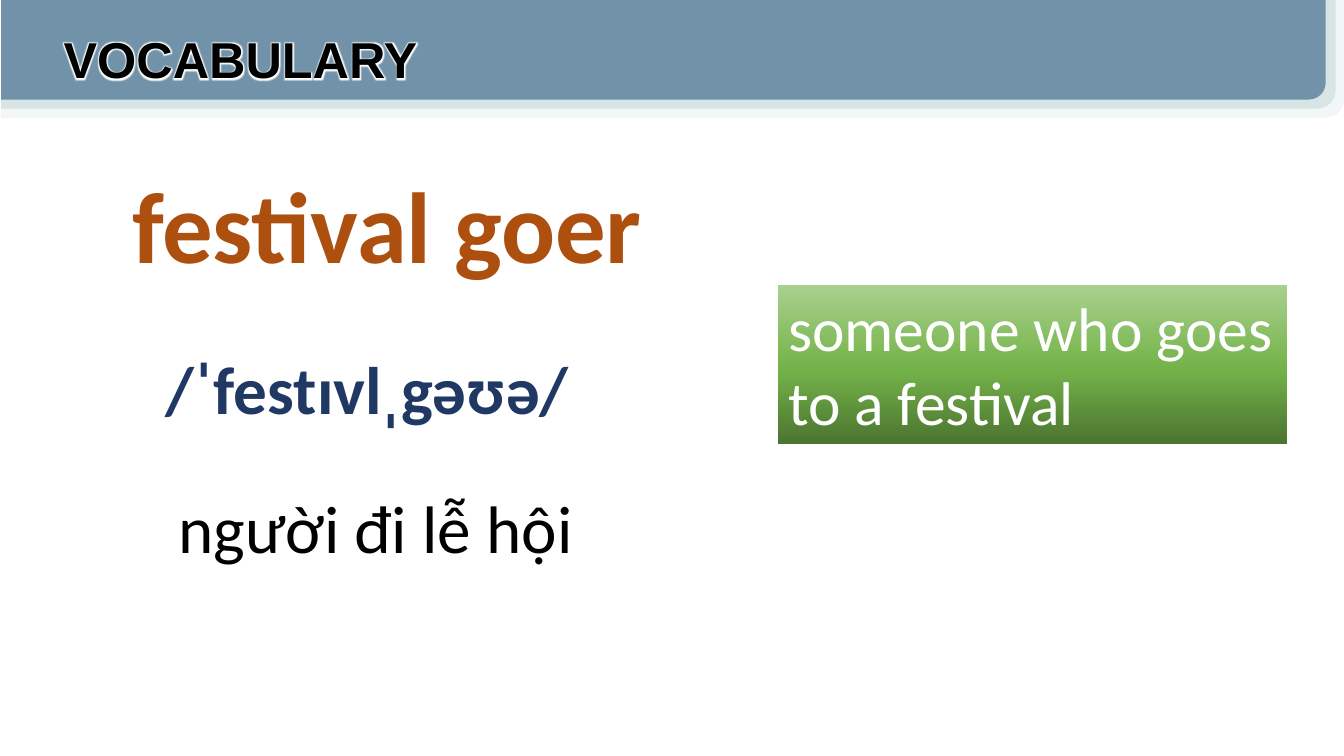
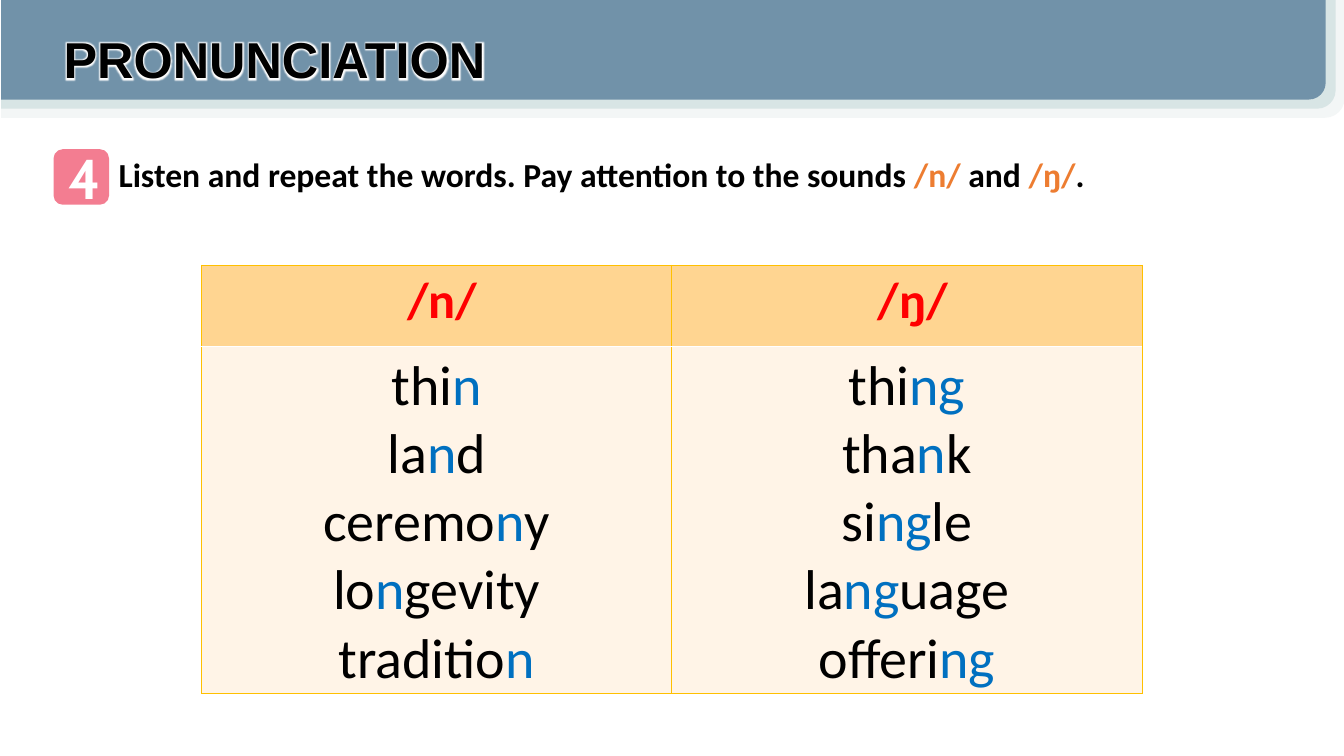
from copy import deepcopy
from dataclasses import dataclass

from lxml import etree
from pptx import Presentation
from pptx.dml import color
from pptx.enum import shapes, text
from pptx.oxml import ns
from pptx.util import Cm, Pt

BLACK, WHITE = "000000", "FFFFFF"
NAVY, RUST, ORANGE, RED, BLUE = "203864", "AD4F0F", "ED7D31", "FF0000", "0070C0"
PINK, GOLD, HEADER, CREAM = "F37D91", "FFC000", "FFD591", "FFF4E7"
LEFT, CENTER = text.PP_ALIGN.LEFT, text.PP_ALIGN.CENTER
TOP, MIDDLE = text.MSO_ANCHOR.TOP, text.MSO_ANCHOR.MIDDLE


@dataclass(frozen=True)
class Box:
    left: float
    top: float
    width: float
    height: float

    def emu(self) -> tuple:
        return Cm(self.left), Cm(self.top), Cm(self.width), Cm(self.height)


@dataclass(frozen=True)
class Style:
    size: float
    color: str = BLACK
    bold: bool = False
    font: str = "Calibri"


@dataclass(frozen=True)
class Band:
    width: float
    height: float
    color: str


@dataclass(frozen=True)
class Entry:
    box: Box
    words: str
    style: Style
    spacing: float = 1.0


@dataclass(frozen=True)
class Column:
    sound: str
    words: tuple


BANDS = (
    Band(33.86, 3.0, "F3F6F6"),
    Band(33.63, 2.77, "D8E5E5"),
    Band(33.38, 2.54, "7192A9"),
)
TITLE_BOX = Box(1.35, 0.58, 11.48, 1.8)
TITLE_STYLE = Style(36, BLACK, True, "Arial")
ENTRIES = (
    Entry(Box(2.49, 4.32, 14.53, 1.83), "festival goer", Style(72, RUST, True), 0.9),
    Entry(Box(3.52, 8.64, 11.48, 2.31), "/ˈfestɪvlˌgəʊə/", Style(48, NAVY, True)),
    Entry(Box(3.84, 12.14, 11.25, 2.31), "người đi lễ hội", Style(48)),
)
MEANING_STOPS = ((0, "4B7430"), (0.48, "74B349"), (1, "A9D18E"))
COLUMNS = (
    Column("/n/", ("thi|n", "la|n|d", "ceremo|n|y", "lo|n|gevity", "traditio|n")),
    Column("/ŋ/", ("thi|ng", "tha|n|k", "si|ng|le", "la|ng|uage", "offeri|ng")),
)


def rgb(value: str) -> color.RGBColor:
    return color.RGBColor.from_string(value)


def add_run(p, words: str, style: Style):
    r = p.add_run()
    r.text = words
    r.font.name = style.font
    r.font.size = Pt(style.size)
    r.font.bold = style.bold
    r.font.color.rgb = rgb(style.color)
    return r


def set_frame(tf, align=LEFT, anchor=TOP):
    tf.word_wrap = True
    tf.auto_size = text.MSO_AUTO_SIZE.NONE
    tf.vertical_anchor = anchor
    p = tf.paragraphs[0]
    p.alignment = align
    return p


def add_shape(slide, kind, box: Box, fill: str = ""):
    sp = slide.shapes.add_shape(kind, *box.emu())
    sp.shadow.inherit = False
    sp.line.fill.background()
    if fill:
        sp.fill.solid()
        sp.fill.fore_color.rgb = rgb(fill)
    return sp


def add_text(slide, box: Box, align=LEFT):
    return set_frame(slide.shapes.add_textbox(*box.emu()).text_frame, align)


def add_glow(r, glow_color: str) -> None:
    fill = r.font._element.find(ns.qn("a:solidFill"))
    effects = etree.Element(ns.qn("a:effectLst"))
    glow = etree.SubElement(effects, ns.qn("a:glow"), rad=str(Pt(4)))
    etree.SubElement(glow, ns.qn("a:srgbClr"), val=glow_color)
    fill.addnext(effects)


def add_slide(prs, title: str):
    slide = prs.slides.add_slide(prs.slide_layouts[5])
    for band in BANDS:
        sp = add_shape(slide, shapes.MSO_SHAPE.ROUND_1_RECTANGLE,
                       Box(0.03, -0.03, band.width, band.height), band.color)
        sp._element.spPr.find(ns.qn("a:xfrm")).set("flipV", "1")
    sp = slide.shapes.title
    sp.left, sp.top, sp.width, sp.height = TITLE_BOX.emu()
    add_glow(add_run(set_frame(sp.text_frame), title, TITLE_STYLE), WHITE)
    slide.shapes._spTree.append(sp._element)
    return slide


def set_gradient(fill, stops: tuple, angle: float) -> None:
    fill.gradient()
    fill.gradient_angle = angle
    first = fill.gradient_stops[0]._gs
    first.addnext(deepcopy(first))
    for stop, (position, value) in zip(fill.gradient_stops, stops):
        stop.position = position
        stop.color.rgb = rgb(value)


def set_borders(cell, top: tuple, bottom: tuple) -> None:
    side = (GOLD, 0.5)
    for tag, (value, width) in zip(("lnL", "lnR", "lnT", "lnB"), (side, side, top, bottom)):
        ln = etree.SubElement(cell._tc.get_or_add_tcPr(), ns.qn(f"a:{tag}"), w=str(Pt(width)))
        fill = etree.SubElement(ln, ns.qn("a:solidFill"))
        etree.SubElement(fill, ns.qn("a:srgbClr"), val=value)


def set_cell(cell, fill: str, top: tuple, bottom: tuple) -> None:
    set_borders(cell, top, bottom)
    cell.fill.solid()
    cell.fill.fore_color.rgb = rgb(fill)
    cell.margin_top, cell.margin_bottom = Cm(0.13), Cm(0)


def add_sound_table(slide, box: Box, header_height: float) -> None:
    tbl = slide.shapes.add_table(2, len(COLUMNS), *box.emu()).table
    tbl.first_row = tbl.horz_banding = False
    tbl.rows[0].height = Cm(header_height)
    tbl.rows[1].height = Cm(box.height - header_height)
    outer, divider = (GOLD, 0.5), (WHITE, 1)
    for i, column in enumerate(COLUMNS):
        head, body = tbl.cell(0, i), tbl.cell(1, i)
        set_cell(head, HEADER, outer, divider)
        set_cell(body, CREAM, divider, outer)
        head.margin_left = Cm(0.54)
        p = head.text_frame.paragraphs[0]
        p.alignment = CENTER
        add_run(p, column.sound, Style(36, RED, True))
        for j, word in enumerate(column.words):
            tf = body.text_frame
            p = tf.add_paragraph() if j else tf.paragraphs[0]
            p.alignment = CENTER
            for k, part in enumerate(word.split("|")):
                add_run(p, part, Style(40, BLUE if k % 2 else BLACK))


def build_vocabulary(prs) -> None:
    slide = add_slide(prs, "VOCABULARY")
    for entry in ENTRIES:
        p = add_text(slide, entry.box, CENTER)
        p.line_spacing = entry.spacing
        add_run(p, entry.words, entry.style)
    sp = add_shape(slide, shapes.MSO_SHAPE.RECTANGLE, Box(19.61, 7.19, 12.83, 4.01))
    set_gradient(sp.fill, MEANING_STOPS, 90)
    add_run(set_frame(sp.text_frame), "someone who goes to a festival", Style(44, WHITE))


def build_pronunciation(prs) -> None:
    slide = add_slide(prs, "PRONUNCIATION")
    p = add_text(slide, Box(2.74, 3.76, 30.25, 1.27))
    for words, value in (
        ("Listen and repeat the words. Pay attention to the sounds ", BLACK),
        ("/n/ ", ORANGE),
        ("and ", BLACK),
        ("/ŋ/", ORANGE),
        (".", BLACK),
    ):
        add_run(p, words, Style(24, value, True))
    badge = add_shape(slide, shapes.MSO_SHAPE.ROUNDED_RECTANGLE, Box(1.35, 3.76, 1.4, 1.4), PINK)
    tf = badge.text_frame
    tf.margin_left = Cm(0.16)
    tf.margin_right = tf.margin_top = tf.margin_bottom = Cm(0)
    add_run(set_frame(tf, CENTER, MIDDLE), "4", Style(40, WHITE, True, "Cabin"))
    add_sound_table(slide, Box(5.08, 6.68, 23.7, 10.8), 2.06)


def main() -> None:
    prs = Presentation()
    prs.slide_width, prs.slide_height = Cm(33.87), Cm(19.05)
    build_vocabulary(prs)
    build_pronunciation(prs)
    prs.save("out.pptx")


if __name__ == "__main__":
    main()
